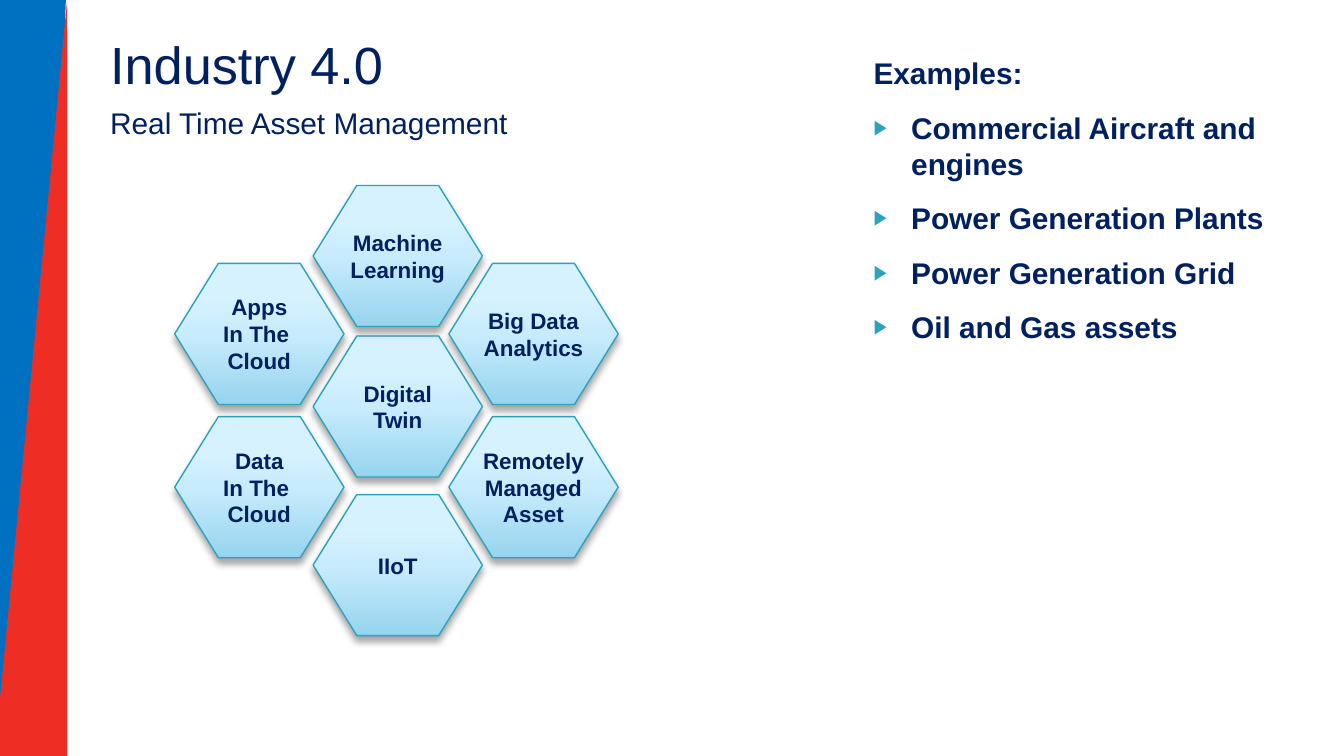
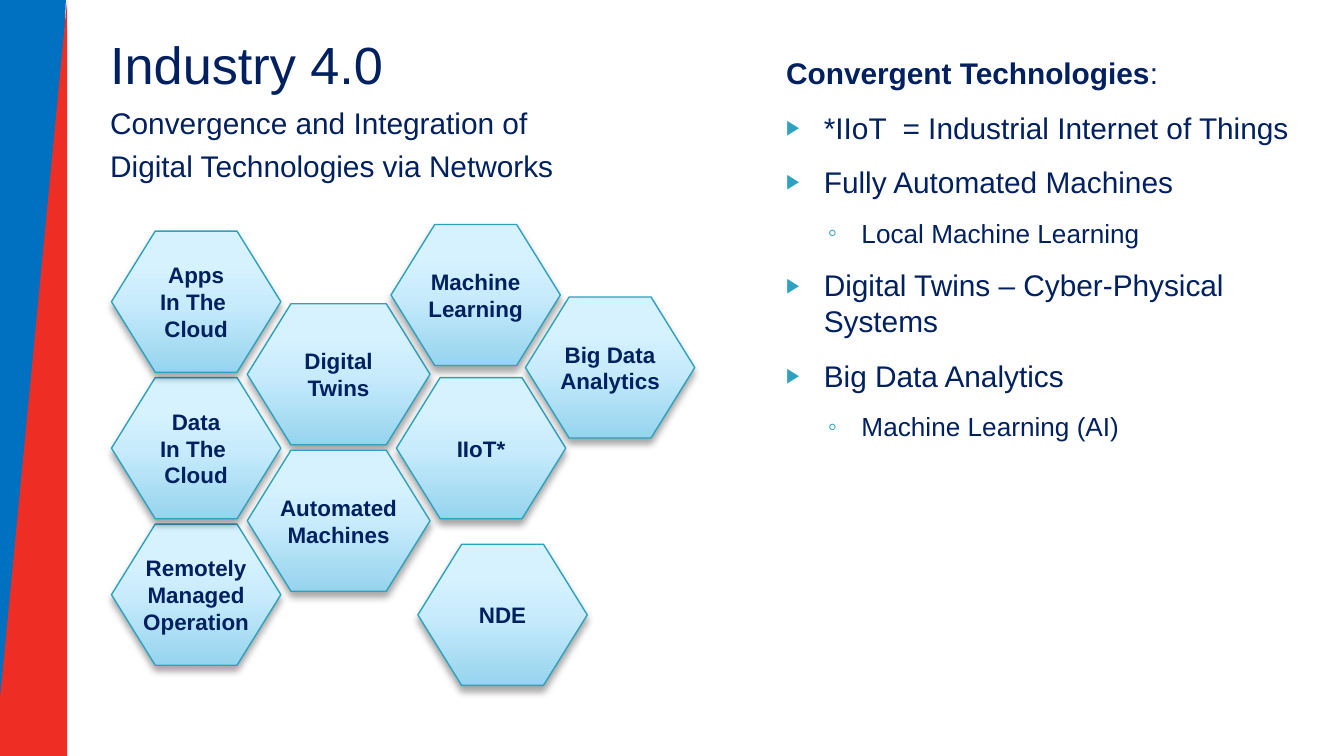
from lxml import etree
from pptx import Presentation
from pptx.dml.color import RGBColor
from pptx.enum.shapes import MSO_SHAPE
from pptx.enum.text import MSO_ANCHOR, MSO_AUTO_SIZE, PP_ALIGN
from pptx.oxml import parse_xml
from pptx.oxml.ns import nsdecls, qn
from pptx.util import Inches, Pt

HEXAGON = MSO_SHAPE.HEXAGON
TOP, MIDDLE = MSO_ANCHOR.TOP, MSO_ANCHOR.MIDDLE
LEFT, CENTER = PP_ALIGN.LEFT, PP_ALIGN.CENTER
NO_FIT = MSO_AUTO_SIZE.NONE

NAVY = RGBColor(0x00, 0x20, 0x60)
TEAL = RGBColor(0x2D, 0xA2, 0xBF)
BLUE = RGBColor(0x00, 0x70, 0xC0)
RED = RGBColor(0xEE, 0x2D, 0x24)
BLACK = RGBColor(0x00, 0x00, 0x00)
HEX_STOPS = [
    (0, RGBColor(0x96, 0xD4, 0xEE)),
    (51, RGBColor(0xC9, 0xEC, 0xFC)),
    (77, RGBColor(0xD7, 0xF2, 0xFF)),
]

FONT = "Arial"
SLIDE_W = 10
SLIDE_H = SLIDE_W * 9 / 16
HEX_W, WIDE_HEX_W, HEX_H = 1.26, 1.36, 1.05
TWO_CONTENT = 3

# Per list level: left margin, hanging indent, text size, space before, bullet, bullet size %
PLAIN = (0.12, 0, 16, 4, None, 100)
LIST_LEVELS = [
    (0.4, -0.28, 16, 4, "▶", 68),
    (0.68, -0.25, 14, 3.2, "◦", 100),
]


def write(p, text, size=16, bold=False, align=LEFT, before=0, after=0):
    """Add text to a paragraph; a vertical tab in it is a line break."""
    first = len(p.runs)
    for i, part in enumerate(text.split("\v")):
        if i:
            p.add_line_break()
        p.add_run().text = part
    for r in p.runs[first:]:
        r.font.name, r.font.size, r.font.bold = FONT, Pt(size), bold
        r.font.color.rgb = NAVY
    p.alignment, p.line_spacing = align, 1.0
    p.space_before, p.space_after = Pt(before), Pt(after)


def set_bullet(p, margin, indent, char=None, percent=100):
    pPr = p._p.get_or_add_pPr()
    pPr.set("marL", str(Inches(margin)))
    pPr.set("indent", str(Inches(indent)))
    if char is None:
        etree.SubElement(pPr, qn("a:buNone"))
        return
    color = etree.SubElement(pPr, qn("a:buClr"))
    etree.SubElement(color, qn("a:srgbClr"), val=str(TEAL))
    etree.SubElement(pPr, qn("a:buSzPct"), val=str(percent * 1000))
    etree.SubElement(pPr, qn("a:buFont"), typeface=FONT)
    etree.SubElement(pPr, qn("a:buChar"), char=char)


def paragraphs(tf, count):
    """Return the first paragraph of a frame and as many new ones as needed."""
    return [tf.paragraphs[0]] + [tf.add_paragraph() for _ in range(count - 1)]


def place(sp, box):
    """Move a placeholder to a box and return its text frame."""
    sp.left, sp.top, sp.width, sp.height = map(Inches, box)
    tf = sp.text_frame
    tf.word_wrap, tf.auto_size, tf.vertical_anchor = True, NO_FIT, TOP
    return tf


def add_heading(sp, box, lines, size):
    tf = place(sp, box)
    for p, line in zip(paragraphs(tf, len(lines)), lines):
        write(p, line, size=size, before=4)
        set_bullet(p, 0.12, 0)


def add_list(sp, box, heading, items, bold=False):
    """Fill a bulleted list: heading holds (text, bold) parts, items (level, text)."""
    tf = place(sp, box)
    first, *rest = paragraphs(tf, len(items) + 1)
    margin, indent, size, before, char, percent = PLAIN
    for text, strong in heading:
        write(first, text, size=size, bold=strong, before=before, after=6)
    set_bullet(first, margin, indent, char, percent)
    for p, (level, text) in zip(rest, items):
        margin, indent, size, before, char, percent = LIST_LEVELS[level]
        p.level = level
        write(p, text, size=size, bold=bold, before=before, after=6)
        set_bullet(p, margin, indent, char, percent)


def style_hexagon(sp):
    """Give a hexagon its upward gradient, outline and soft shadow."""
    sp.fill.background()
    sp.line.color.rgb, sp.line.width = TEAL, Pt(0.75)
    stops = "".join(
        f'<a:gs pos="{pos * 1000}"><a:srgbClr val="{color}"/></a:gs>'
        for pos, color in HEX_STOPS
    )
    gradient = parse_xml(
        f'<a:gradFill {nsdecls("a")} rotWithShape="1"><a:gsLst>{stops}</a:gsLst>'
        '<a:lin ang="16200000" scaled="0"/></a:gradFill>'
    )
    spPr = sp.element.spPr
    spPr.replace(spPr.find(qn("a:noFill")), gradient)
    spPr.append(parse_xml(
        f'<a:effectLst {nsdecls("a")}><a:outerShdw blurRad="{Pt(4)}" dist="{Pt(3)}" '
        f'dir="5400000" rotWithShape="0"><a:srgbClr val="{BLACK}">'
        '<a:alpha val="35000"/></a:srgbClr></a:outerShdw></a:effectLst>'
    ))


def add_hexagon(slide, x, y, lines, width=HEX_W):
    sp = slide.shapes.add_shape(
        HEXAGON, Inches(x), Inches(y), Inches(width), Inches(HEX_H))
    sp.adjustments[0] = 0.31
    style_hexagon(sp)
    tf = sp.text_frame
    tf.word_wrap, tf.vertical_anchor = True, MIDDLE
    tf.margin_left = tf.margin_right = Inches(0.02)
    tf.margin_top = tf.margin_bottom = Inches(0.01)
    for p, line in zip(paragraphs(tf, len(lines)), lines):
        write(p, line, size=12, bold=True, align=CENTER)


def add_side_bands(slide):
    """Draw the two side bands and move them to the slide's layout."""
    bands = [
        (BLUE, [(0, 0), (0.49, 0), (0.27, SLIDE_H), (0, SLIDE_H)]),
        (RED, [(0.5, 0), (0.5, SLIDE_H), (0, SLIDE_H), (0, 5.2)]),
    ]
    tree = slide.slide_layout.shapes.element
    for number, (color, corners) in enumerate(bands, start=101):
        points = [(Inches(x), Inches(y)) for x, y in corners]
        builder = slide.shapes.build_freeform(*points[0])
        builder.add_line_segments(points[1:], close=True)
        sp = builder.convert_to_shape()
        sp.shadow.inherit = False
        sp.fill.solid()
        sp.fill.fore_color.rgb = color
        sp.line.fill.background()
        sp.element.nvSpPr.cNvPr.set("id", str(number))
        tree.append(sp.element)


def add_topic_slide(prs, subtitle, subtitle_box, list_box, heading, items,
                    hexagons, bold=False):
    slide = prs.slides.add_slide(prs.slide_layouts[TWO_CONTENT])
    title, left, right = slide.placeholders
    add_heading(title, (0.6, 0.19, 4.4, 0.51), ["Industry 4.0"], 28)
    add_heading(left, subtitle_box, subtitle, 16)
    add_list(right, list_box, heading, items, bold)
    for hexagon in hexagons:
        add_hexagon(slide, *hexagon)
    return slide


def add_asset_slide(prs):
    left, middle, right = 1.3, 2.33, 3.34
    upper, lower = 1.96, 3.1
    return add_topic_slide(
        prs,
        subtitle=["Real Time Asset Management"],
        subtitle_box=(0.6, 0.73, 3.49, 0.51),
        list_box=(6.28, 0.36, 3.49, 2.99),
        heading=[("Examples:", True)],
        items=[
            (0, "Commercial Aircraft and engines"),
            (0, "Power Generation Plants"),
            (0, "Power Generation Grid"),
            (0, "Oil and Gas assets"),
        ],
        bold=True,
        hexagons=[
            (middle, 2.5, ["Digital Twin"]),
            (right, lower, ["Remotely", "Managed", "Asset"]),
            (middle, 3.68, ["IIoT"]),
            (left, lower, ["Data\vIn The ", "Cloud"]),
            (left, upper, ["Apps", "In The ", "Cloud"]),
            (middle, 1.38, ["Machine", "Learning"]),
            (right, upper, ["Big Data", "Analytics"]),
        ],
    )


def add_convergence_slide(prs):
    left, middle, pitch = 0.83, 1.84, 1.09
    top, middle_top = 1.72, 2.26
    return add_topic_slide(
        prs,
        subtitle=["Convergence and Integration of",
                  "Digital Technologies via Networks"],
        subtitle_box=(0.6, 0.73, 4.57, 0.74),
        list_box=(5.63, 0.36, 4.13, 3.95),
        heading=[("Convergent Technologies", True), (":", False)],
        items=[
            (0, "*IIoT  = Industrial Internet of Things"),
            (0, "Fully Automated Machines"),
            (1, "Local Machine Learning"),
            (0, "Digital Twins – Cyber-Physical Systems"),
            (0, "Big Data Analytics"),
            (1, "Machine Learning (AI)"),
        ],
        hexagons=[
            (middle, middle_top, ["Digital Twins"], WIDE_HEX_W),
            (left, top + 2 * pitch, ["Remotely", "Managed", "Operation"]),
            (2.95, top + pitch, ["IIoT*"]),
            (left, top + pitch, ["Data\vIn The ", "Cloud"]),
            (left, top, ["Apps", "In The ", "Cloud"]),
            (2.91, 1.67, ["Machine", "Learning"]),
            (3.91, 2.21, ["Big Data", "Analytics"]),
            (3.11, 4.05, ["NDE"]),
            (middle, middle_top + pitch, ["Automated", "Machines"], WIDE_HEX_W),
        ],
    )


def main():
    prs = Presentation()
    prs.slide_width, prs.slide_height = Inches(SLIDE_W), Inches(SLIDE_H)
    add_side_bands(add_asset_slide(prs))
    add_convergence_slide(prs)
    prs.save("out.pptx")


if __name__ == "__main__":
    main()
